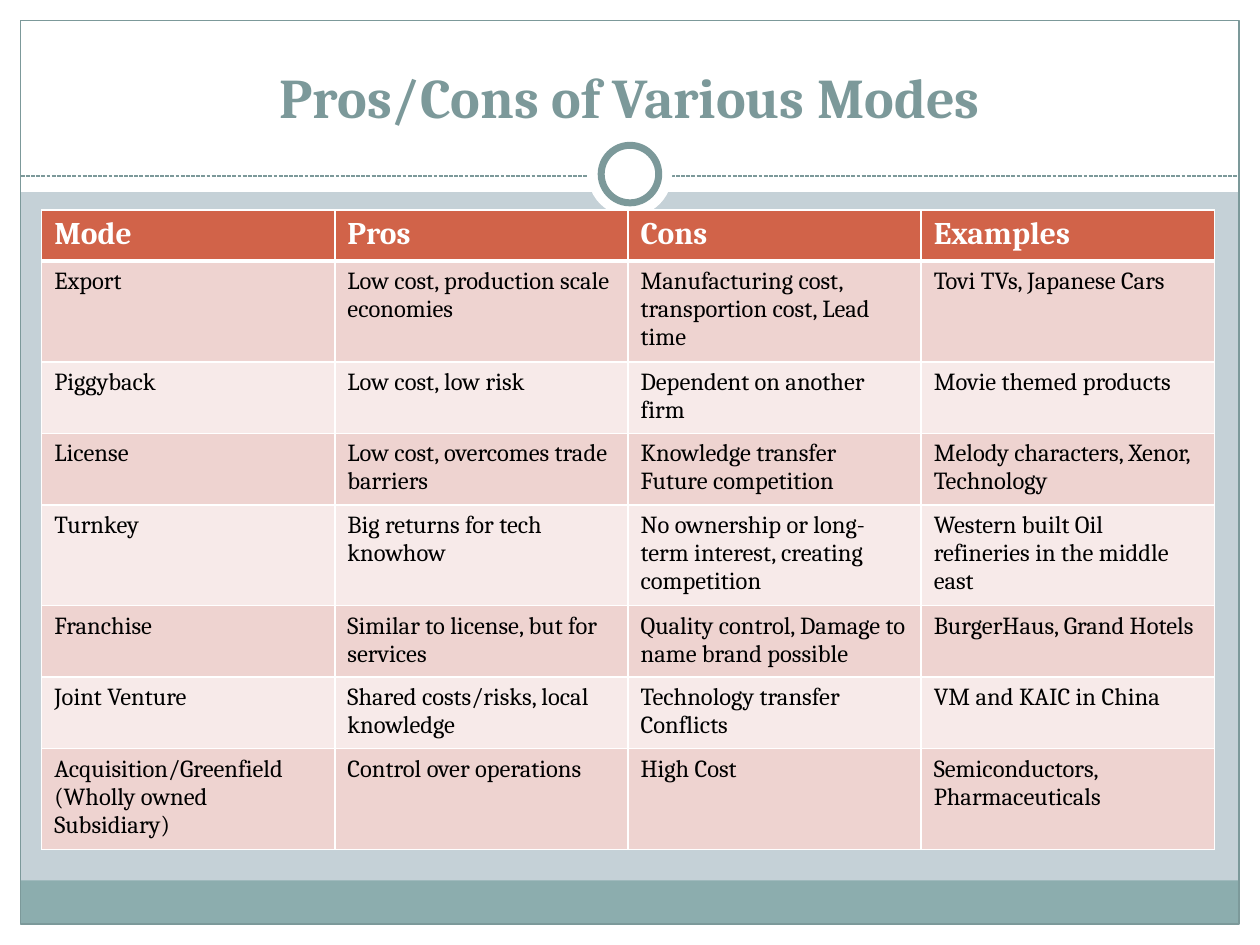
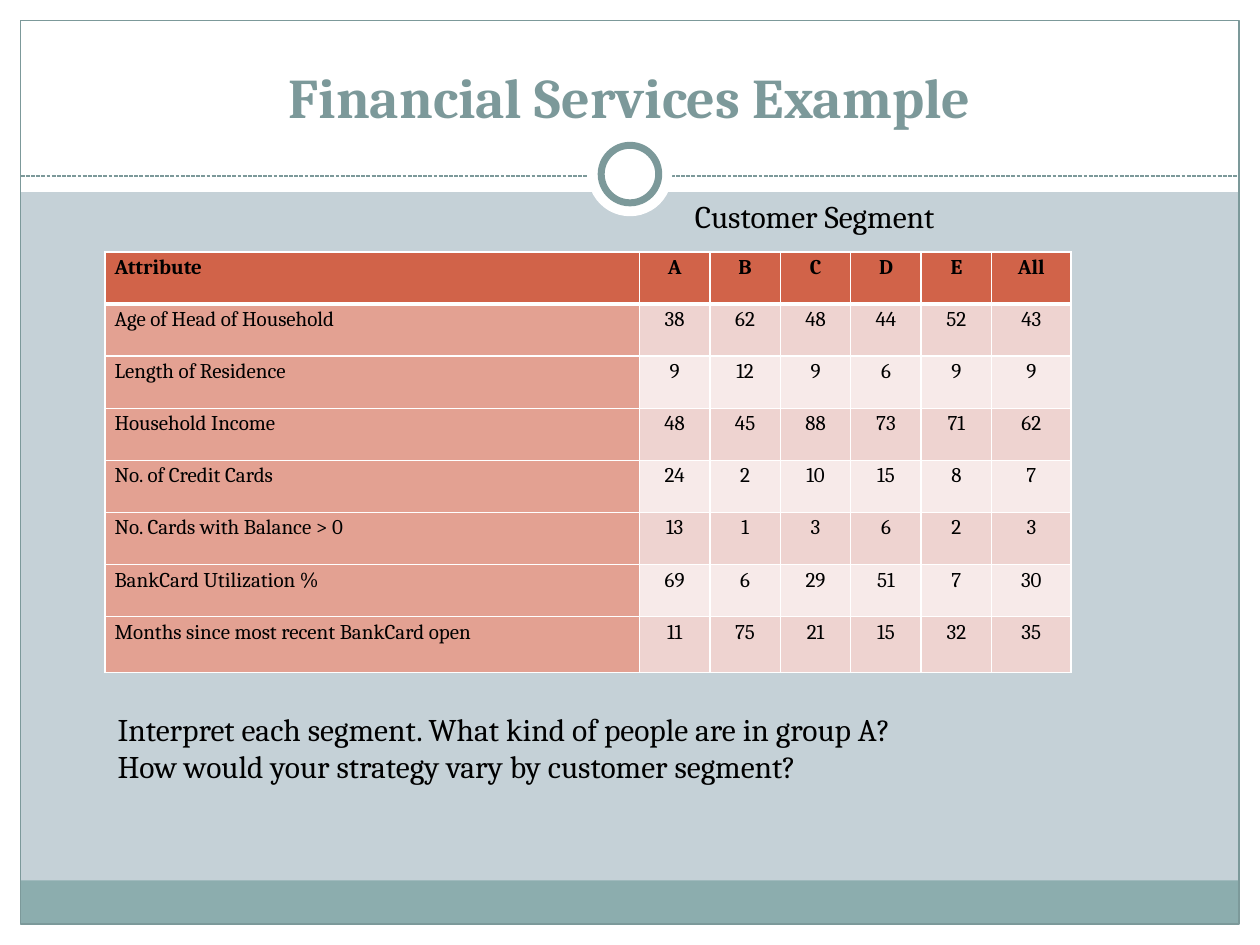
import pptx
import pptx.dml.color
import pptx.enum.dml
import pptx.enum.shapes
import pptx.enum.text
import pptx.oxml
import pptx.oxml.ns
import pptx.util
from lxml import etree

Cm, Pt = pptx.util.Cm, pptx.util.Pt
SHAPE = pptx.enum.shapes.MSO_SHAPE
ALIGN = pptx.enum.text.PP_ALIGN
ANCHOR = pptx.enum.text.MSO_ANCHOR

FONT = "Cambria"
WHITE, BLACK = "FFFFFF", "000000"
PAGE, TEAL, FOOTER = "C5D1D7", "7C999A", "8CADAE"
HEADER, LABEL = "D16349", "E3A192"
BANDS = ("EED3D0", "F7EAE9")
WIDTH, HEIGHT, MARGIN = 25.4, 19.05, 0.42

MODES = [
    ["Mode", "Pros", "Cons", "Examples"],
    ["Export", "Low cost, production scale economies",
     "Manufacturing cost, transportion cost, Lead time", "Tovi TVs, Japanese Cars"],
    ["Piggyback", "Low cost, low risk", "Dependent on another firm", "Movie themed products"],
    ["License", "Low cost, overcomes trade barriers",
     "Knowledge transfer\nFuture competition", "Melody characters, Xenor, Technology"],
    ["Turnkey", "Big returns for tech knowhow",
     "No ownership or long-term interest, creating competition",
     "Western built Oil refineries in the middle east"],
    ["Franchise", "Similar to license, but for services",
     "Quality control, Damage to name brand possible", "BurgerHaus, Grand Hotels"],
    ["Joint Venture", "Shared costs/risks, local knowledge",
     "Technology transfer\nConflicts", "VM and KAIC in China"],
    ["Acquisition/Greenfield\n(Wholly owned Subsidiary)", "Control over operations",
     "High Cost", "Semiconductors, Pharmaceuticals"],
]

SEGMENTS = [
    ["Attribute", "A", "B", "C", "D", "E", "All"],
    ["Age of Head of Household", 38, 62, 48, 44, 52, 43],
    ["Length of Residence", 9, 12, 9, 6, 9, 9],
    ["Household Income", 48, 45, 88, 73, 71, 62],
    ["No. of Credit Cards", 24, 2, 10, 15, 8, 7],
    ["No. Cards with Balance > 0", 13, 1, 3, 6, 2, 3],
    ["BankCard Utilization %", 69, 6, 29, 51, 7, 30],
    ["Months since most recent BankCard open", 11, 75, 21, 15, 32, 35],
]


def rgb(value):
    """Turn a hex string into a colour."""
    return pptx.dml.color.RGBColor.from_string(value)


def write(tf, text, size, color=BLACK, bold=False, align=ALIGN.LEFT, spacing=None):
    """Fill a text frame with one paragraph for each line of text."""
    for i, line in enumerate(text.split("\n")):
        p = tf.add_paragraph() if i else tf.paragraphs[0]
        p.alignment = align
        p.line_spacing = spacing
        r = p.add_run()
        r.text = line
        r.font.name, r.font.size, r.font.bold = FONT, Pt(size), bold
        r.font.color.rgb = rgb(color)


def add_text(slide, box, text, size, anchor=ANCHOR.TOP, wrap=True, **style):
    """Add a text box."""
    tf = slide.shapes.add_textbox(*map(Cm, box)).text_frame
    tf.word_wrap = wrap
    tf.vertical_anchor = anchor
    write(tf, text, size, **style)


def add_shape(slide, kind, box, fill=None, line=None, weight=0.75):
    """Add a flat preset shape."""
    sp = slide.shapes.add_shape(kind, *map(Cm, box))
    sp.shadow.inherit = False
    if fill:
        sp.fill.solid()
        sp.fill.fore_color.rgb = rgb(fill)
    else:
        sp.fill.background()
    if line:
        sp.line.color.rgb = rgb(line)
        sp.line.width = Pt(weight)
    else:
        sp.line.fill.background()


def add_dashed_rule(slide, y):
    """Add a dashed line between the side margins."""
    cxn = slide.shapes.add_connector(pptx.enum.shapes.MSO_CONNECTOR.STRAIGHT,
                                     Cm(MARGIN), Cm(y), Cm(WIDTH - MARGIN), Cm(y))
    cxn.line.color.rgb = rgb(TEAL)
    cxn.line.width = Pt(0.75)
    cxn.line.dash_style = pptx.enum.dml.MSO_LINE.SQUARE_DOT
    etree.SubElement(cxn.element.spPr, pptx.oxml.ns.qn("a:effectLst"))


def add_ring(slide, x, y):
    """Add the white disc and ring centred on a point."""
    for size, line in ((1.7, None), (1.16, TEAL)):
        box = (x - size / 2, y - size / 2, size, size)
        add_shape(slide, SHAPE.OVAL, box, WHITE, line, 4)


def add_slide(prs, title):
    """Add a blank slide with the shared frame and a title."""
    slide = prs.slides.add_slide(prs.slide_layouts[6])
    slide.background.fill.solid()
    slide.background.fill.fore_color.rgb = rgb(PAGE)
    inner_w, inner_h = WIDTH - 2 * MARGIN, HEIGHT - 2 * MARGIN
    for box, fill in (((0, HEIGHT - MARGIN, WIDTH, MARGIN), WHITE),
                      ((0, 0, WIDTH, 3.87), WHITE),
                      ((0, 0, MARGIN, HEIGHT), WHITE),
                      ((WIDTH - MARGIN, 0, MARGIN, HEIGHT), WHITE),
                      ((MARGIN, 17.75, inner_w, 0.87), FOOTER)):
        add_shape(slide, SHAPE.RECTANGLE, box, fill)
    add_shape(slide, SHAPE.RECTANGLE, (MARGIN, MARGIN, inner_w, inner_h), line=TEAL)
    add_dashed_rule(slide, 3.55)
    add_ring(slide, WIDTH / 2, 3.51)
    add_text(slide, (0.85, 0.64, 23.7, 2.11), title, 32, ANCHOR.BOTTOM,
             color=TEAL, bold=True, align=ALIGN.CENTER)
    return slide


def set_borders(cell, top, bottom):
    """Draw white borders, with the top and bottom weights in points."""
    tcPr = cell._tc.get_or_add_tcPr()
    for side, weight in (("L", 1), ("R", 1), ("T", top), ("B", bottom)):
        tcPr.append(pptx.oxml.parse_xml(
            f'<a:ln{side} {pptx.oxml.ns.nsdecls("a")} w="{Pt(weight)}"><a:solidFill>'
            f'<a:srgbClr val="{WHITE}"/></a:solidFill></a:ln{side}>'))


def add_table(slide, left, top, widths, heights, rows, style):
    """Add a banded table, taking each cell's text style and fill from style(row, column)."""
    table = slide.shapes.add_table(len(rows), len(widths), Cm(left), Cm(top),
                                   Cm(sum(widths)), Cm(sum(heights))).table
    for col, width in zip(table.columns, widths):
        col.width = Cm(width)
    for i, row in enumerate(rows):
        table.rows[i].height = Cm(heights[i])
        for j, value in enumerate(row):
            cell = table.cell(i, j)
            fill, insets, text_style = style(i, j)
            set_borders(cell, 3 if i == 1 else 1, 3 if i == 0 else 1)
            cell.fill.solid()
            cell.fill.fore_color.rgb = rgb(fill)
            if insets:
                cell.margin_left = cell.margin_right = Cm(insets)
                cell.margin_top = cell.margin_bottom = 0
            write(cell.text_frame, str(value), **text_style)


def band(row):
    """Return the fill of a table row."""
    return BANDS[(row - 1) % 2] if row else HEADER


def mode_style(row, col):
    """Style the cells of the entry mode table."""
    if row == 0:
        return band(row), None, dict(size=18, color=WHITE, bold=True)
    return band(row), None, dict(size=14)


def segment_style(row, col):
    """Style the cells of the customer segment table."""
    fill = LABEL if row and not col else band(row)
    align = ALIGN.CENTER if col else ALIGN.LEFT
    return fill, 0.19, dict(size=12, bold=row == 0, align=align, spacing=1.15)


def main():
    """Build the two slides and save them."""
    prs = pptx.Presentation()
    prs.slide_width, prs.slide_height = Cm(WIDTH), Cm(HEIGHT)

    slide = add_slide(prs, "Pros/Cons of Various Modes")
    add_table(slide, 0.84, 4.23, [5.91] * 4, [1.03] * 8, MODES, mode_style)

    slide = add_slide(prs, "Financial Services Example")
    add_table(slide, 2.12, 5.08, [10.77] + [1.42] * 5 + [1.6],
              [1.05] * 7 + [1.13], SEGMENTS, segment_style)
    add_text(slide, (2.12, 14.18, 19.9, 1.8),
             "Interpret each segment. What kind of people are in group A?\n"
             "How would your strategy vary by customer segment?", 18)
    add_text(slide, (13.76, 3.84, 5.92, 1.03), "Customer Segment", 18, wrap=False)

    prs.save("out.pptx")


if __name__ == "__main__":
    main()
